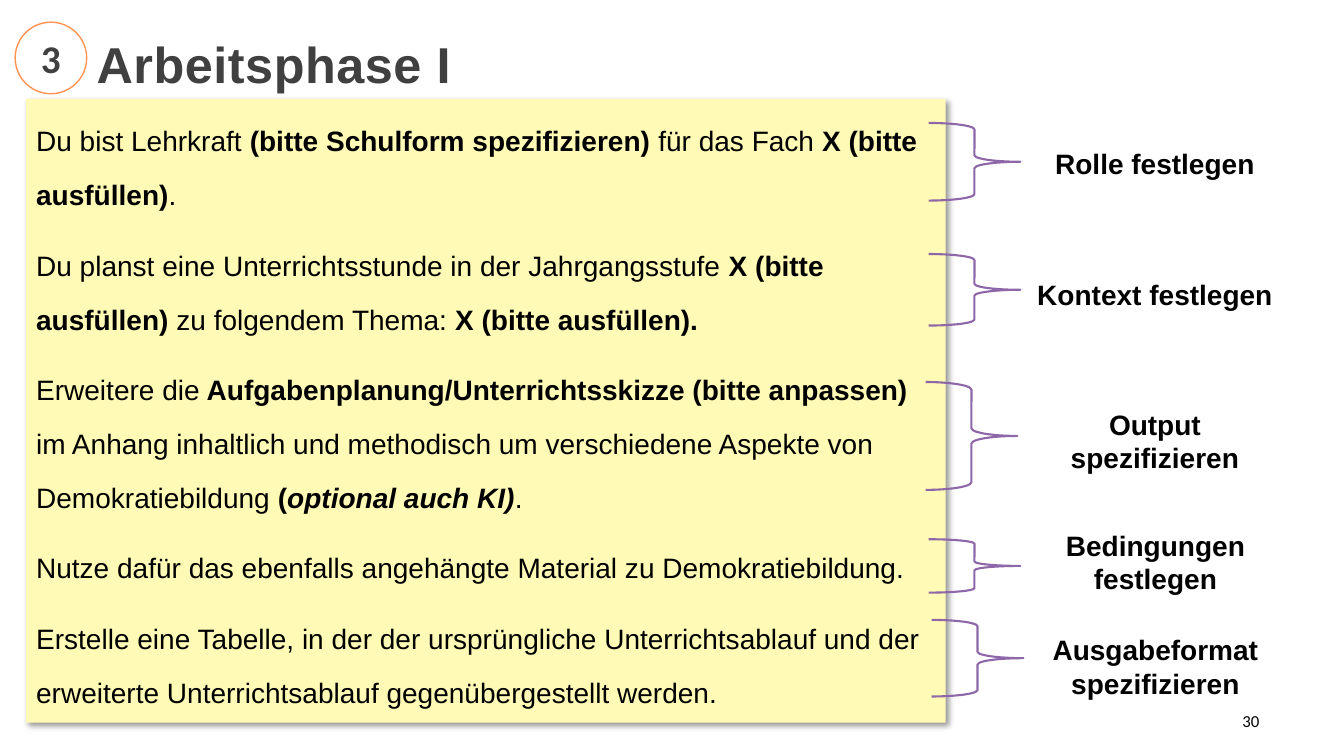
"""Build the slide "Arbeitsphase I" with a prompt template and its labelled parts."""
from lxml.etree import SubElement
from pptx import Presentation
from pptx.dml.color import RGBColor
from pptx.enum.shapes import MSO_SHAPE
from pptx.enum.text import MSO_ANCHOR, PP_ALIGN
from pptx.oxml.ns import qn
from pptx.util import Emu, Pt

PX = 9144
BLACK = RGBColor(0x00, 0x00, 0x00)
WHITE = RGBColor(0xFF, 0xFF, 0xFF)
GREY = RGBColor(0x40, 0x40, 0x40)
YELLOW = RGBColor(0xFF, 0xFA, 0xB5)
PURPLE = RGBColor(0x8D, 0x67, 0xA8)
ORANGE = RGBColor(0xFF, 0x93, 0x52)

PROMPT = [
    [("Du bist Lehrkraft", ""), (" (bitte Schulform spezifizieren) ", "b"),
     ("für das Fach ", ""), ("X (bitte ausfüllen)", "b"), (".", "")],
    [("Du planst eine Unterrichtsstunde in der Jahrgangsstufe ", ""),
     ("X (bitte ausfüllen)", "b"), (" zu folgendem Thema:", ""),
     (" X (bitte ausfüllen).", "b")],
    [("Erweitere die", ""),
     (" Aufgabenplanung/Unterrichtsskizze (bitte anpassen) ", "b"),
     ("im Anhang inhaltlich und methodisch um verschiedene Aspekte von "
      "Demokratiebildung ", ""),
     ("(", "b"), ("optional auch KI)", "bi"), (".", "")],
    [("Nutze dafür das ebenfalls angehängte Material zu Demokratiebildung.", "")],
    [("Erstelle eine Tabelle, in der der ursprüngliche Unterrichtsablauf und der "
      "erweiterte Unterrichtsablauf gegenübergestellt werden.", "")],
]

STEPS = [
    ("Rolle festlegen", (1015, 140, 261, 44), (921, 122, 91, 77)),
    ("Kontext festlegen", (1015, 270, 261, 44), (921, 252, 91, 71)),
    ("Output spezifizieren", (1015, 399, 261, 77), (918, 379, 91, 107)),
    ("Bedingungen festlegen", (990, 519, 312, 77), (921, 535, 91, 53)),
    ("Ausgabeformat spezifizieren", (958, 623, 376, 77), (924, 615, 91, 76)),
]


def emu(box):
    """Turn a box given in px into EMU lengths."""
    return [Emu(length * PX) for length in box]


def add_run(paragraph, text, size, style="", color=BLACK, font="Arial"):
    """Add one run; style holds b for bold and i for italic."""
    run = paragraph.add_run()
    run.text = text
    run.font.name = font
    run.font.size = Pt(size)
    run.font.bold = "b" in style
    run.font.italic = "i" in style
    run.font.color.rgb = color
    return run


def add_line_of_text(slide, box, text, size, style="", color=BLACK, font="Arial",
                     align=PP_ALIGN.CENTER, anchor=MSO_ANCHOR.TOP):
    """Add a wrapping text box with a single run and return the run."""
    frame = slide.shapes.add_textbox(*emu(box)).text_frame
    frame.word_wrap = True
    frame.vertical_anchor = anchor
    paragraph = frame.paragraphs[0]
    paragraph.alignment = align
    return add_run(paragraph, text, size, style, color, font)


def add_outline(slide, preset, box, fill=None, line=None, width=1):
    """Add a preset shape without shadow, with optional fill and line."""
    shape = slide.shapes.add_shape(preset, *emu(box))
    shape.shadow.inherit = False
    if fill is None:
        shape.fill.background()
    else:
        shape.fill.solid()
        shape.fill.fore_color.rgb = fill
    if line is None:
        shape.line.fill.background()
    else:
        shape.line.color.rgb = line
        shape.line.width = Pt(width)
    return shape


def add_drop_shadow(shape):
    """Give a shape a soft shadow to the lower right."""
    effects = shape._element.spPr.find(qn("a:effectLst"))
    shadow = SubElement(effects, qn("a:outerShdw"), blurRad=str(Pt(4)),
                        dist=str(Pt(3)), dir="2700000", algn="tl", rotWithShape="0")
    color = SubElement(shadow, qn("a:srgbClr"), val="000000")
    SubElement(color, qn("a:alpha"), val="40000")


def add_prompt(slide):
    """Add the yellow panel with the prompt template."""
    panel = add_outline(slide, MSO_SHAPE.RECTANGLE, (26, 98, 912, 619), YELLOW)
    add_drop_shadow(panel)
    frame = panel.text_frame
    frame.word_wrap = True
    frame.vertical_anchor = MSO_ANCHOR.TOP
    for index, parts in enumerate(PROMPT):
        paragraph = frame.add_paragraph() if index else frame.paragraphs[0]
        paragraph.alignment = PP_ALIGN.LEFT
        paragraph.line_spacing = 1.6
        paragraph.space_after = Pt(12)
        for text, style in parts:
            add_run(paragraph, text, 20, style)


def add_badge(slide):
    """Add the circled phase number."""
    badge = add_outline(slide, MSO_SHAPE.OVAL, (15, 22, 71, 71), WHITE, ORANGE)
    frame = badge.text_frame
    frame.vertical_anchor = MSO_ANCHOR.MIDDLE
    paragraph = frame.paragraphs[0]
    paragraph.alignment = PP_ALIGN.CENTER
    add_run(paragraph, "3", 28, "b", GREY, "Calibri")


def main():
    """Build and save the slide."""
    deck = Presentation()
    deck.slide_width, deck.slide_height = emu((1333, 750))
    slide = deck.slides.add_slide(deck.slide_layouts[6])

    title = add_line_of_text(slide, (86, 0, 1094, 125), "Arbeitsphase I", 36, "b", GREY,
                             align=PP_ALIGN.LEFT, anchor=MSO_ANCHOR.MIDDLE)
    title._r.get_or_add_rPr().set("spc", "40")
    add_prompt(slide)
    for label, label_box, brace_box in STEPS:
        add_line_of_text(slide, label_box, label, 20, "b")
        add_outline(slide, MSO_SHAPE.RIGHT_BRACE, brace_box, line=PURPLE, width=1.5)
    add_line_of_text(slide, (959, 695, 300, 40), "30", 12, font="Calibri",
                     align=PP_ALIGN.RIGHT, anchor=MSO_ANCHOR.MIDDLE)
    add_badge(slide)
    deck.save("out.pptx")


if __name__ == "__main__":
    main()
